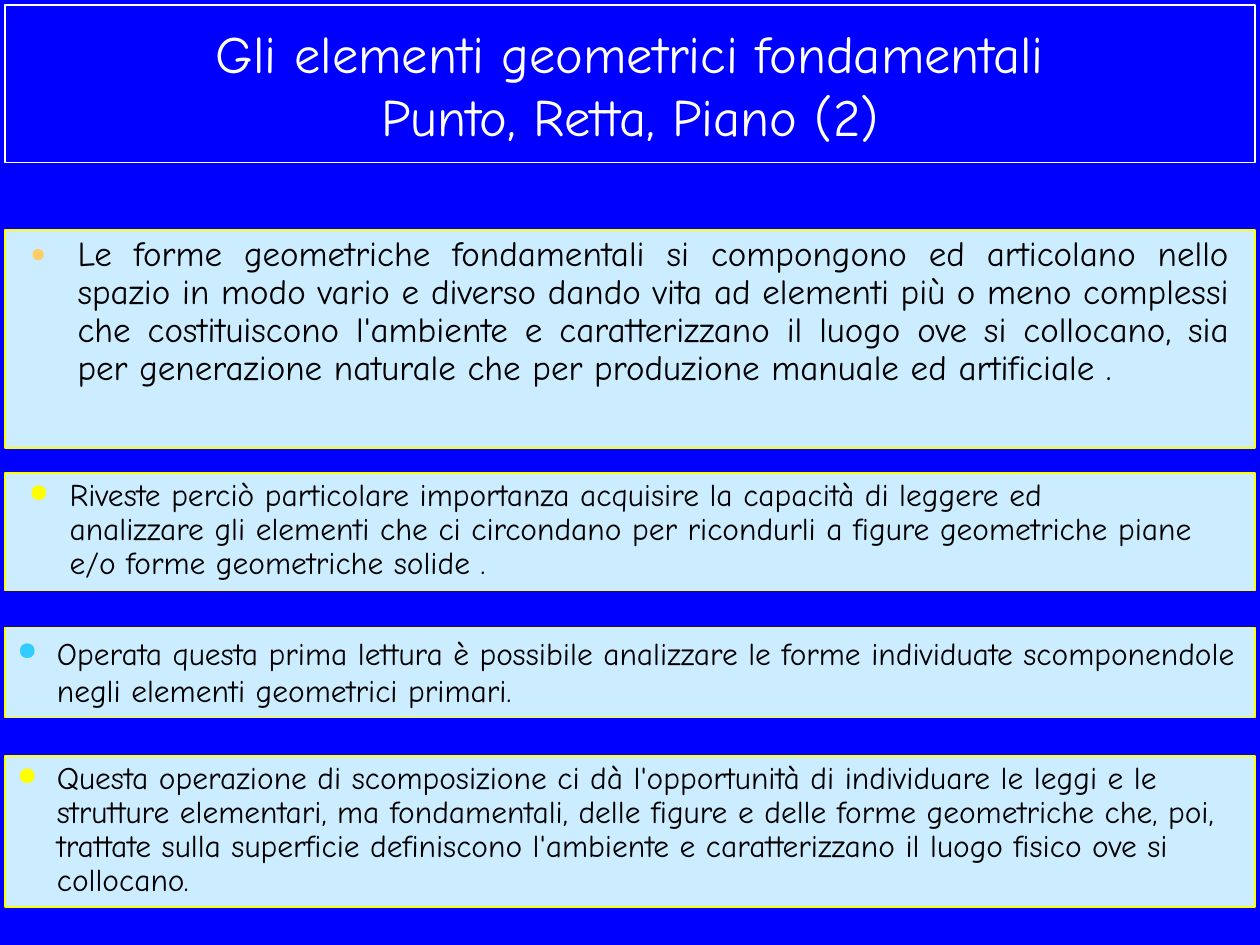
from dataclasses import dataclass

from lxml.etree import SubElement
from pptx import Presentation
from pptx.dml.color import RGBColor
from pptx.enum.shapes import MSO_SHAPE
from pptx.enum.text import MSO_ANCHOR, MSO_AUTO_SIZE, PP_ALIGN
from pptx.oxml.ns import qn
from pptx.shapes.autoshape import Shape
from pptx.util import Pt

BLUE = RGBColor(0x00, 0x00, 0xFF)
PALE_BLUE = RGBColor(0xCC, 0xEC, 0xFF)
SKY = RGBColor(0x33, 0xCC, 0xFF)
YELLOW = RGBColor(0xFF, 0xFF, 0x00)
ORANGE = RGBColor(0xFF, 0xCC, 0x66)
WHITE = RGBColor(0xFF, 0xFF, 0xFF)
BLACK = RGBColor(0x00, 0x00, 0x00)

FONT = "Comic Neue"
LEFT = 2.88
WIDTH = 714.24


@dataclass
class Panel:
    text: str
    top: float
    height: float
    bullet_color: RGBColor
    text_indent: float = 22.5
    hanging: float = 22.5
    line_spacing: float = 0.9
    size: float = 18
    bullet_percent: int = 80
    side_inset: float = 7.2
    align: PP_ALIGN = PP_ALIGN.LEFT


BODY = Panel(
    "Le forme geometriche fondamentali si compongono ed articolano nello spazio "
    "in modo vario e diverso dando vita ad elementi più o meno complessi che "
    "costituiscono l'ambiente e caratterizzano il luogo ove si collocano, sia "
    "per generazione naturale che per produzione manuale ed artificiale .",
    131.5, 124.5, ORANGE, text_indent=27, hanging=27, size=20,
    bullet_percent=75, side_inset=14.4, align=PP_ALIGN.JUSTIFY,
)
PANELS = [
    Panel(
        "Riveste perciò particolare importanza acquisire la capacità di leggere ed\v"
        "analizzare gli elementi che ci circondano per ricondurli a figure "
        "geometriche piane e/o forme geometriche solide .",
        270.5, 67, YELLOW, text_indent=29.75, hanging=23.25,
    ),
    Panel(
        "Operata questa prima lettura è possibile analizzare le forme individuate "
        "scomponendole negli elementi geometrici primari.",
        358.5, 51.5, SKY, line_spacing=1.0,
    ),
    Panel(
        "Questa operazione di scomposizione ci dà l'opportunità di individuare le "
        "leggi e le strutture elementari, ma fondamentali, delle figure e delle "
        "forme geometriche che, poi, trattate sulla superficie definiscono "
        "l'ambiente e caratterizzano il luogo fisico ove si collocano.",
        432, 86.5, YELLOW,
    ),
]


def place(box: Shape, top: float, height: float, line: RGBColor, weight: float) -> None:
    box.left, box.top = Pt(LEFT), Pt(top)
    box.width, box.height = Pt(WIDTH), Pt(height)
    box.line.color.rgb = line
    box.line.width = Pt(weight)


def write(box: Shape, text: str, size: float, color: RGBColor,
          align: PP_ALIGN, anchor: MSO_ANCHOR, side_inset: float = 7.2) -> None:
    frame = box.text_frame
    frame.word_wrap = True
    frame.auto_size = MSO_AUTO_SIZE.NONE
    frame.vertical_anchor = anchor
    frame.margin_left = frame.margin_right = Pt(side_inset)
    frame.margin_top = frame.margin_bottom = Pt(3.6)
    frame.text = text
    para = frame.paragraphs[0]
    para.alignment = align
    para.space_before = Pt(0)
    for span in para.runs:
        span.font.name = FONT
        span.font.size = Pt(size)
        span.font.color.rgb = color


def add_bullet(box: Shape, panel: Panel) -> None:
    para = box.text_frame.paragraphs[0]
    para.line_spacing = panel.line_spacing
    properties = para._p.get_or_add_pPr()
    properties.set("marL", str(Pt(panel.text_indent)))
    properties.set("indent", str(-Pt(panel.hanging)))
    color = SubElement(properties, qn("a:buClr"))
    SubElement(color, qn("a:srgbClr"), val=str(panel.bullet_color))
    SubElement(properties, qn("a:buSzPct"), val=str(panel.bullet_percent * 1000))
    SubElement(properties, qn("a:buChar"), char="●")


def draw_panel(box: Shape, panel: Panel) -> None:
    place(box, panel.top, panel.height, YELLOW, 1)
    box.fill.solid()
    box.fill.fore_color.rgb = PALE_BLUE
    box.shadow.inherit = False
    write(box, panel.text, panel.size, BLACK, panel.align,
          MSO_ANCHOR.TOP, panel.side_inset)
    add_bullet(box, panel)


def main() -> None:
    deck = Presentation()
    deck.slide_width, deck.slide_height = Pt(720), Pt(540)
    page = deck.slides.add_slide(deck.slide_layouts[1])
    page.background.fill.solid()
    page.background.fill.fore_color.rgb = BLUE

    title = page.shapes.title
    place(title, LEFT, 90, WHITE, 0.75)
    write(title, "Gli elementi geometrici fondamentali\vPunto, Retta, Piano (2)",
          30, WHITE, PP_ALIGN.CENTER, MSO_ANCHOR.MIDDLE)

    draw_panel(page.placeholders[1], BODY)
    for panel in PANELS:
        box = page.shapes.add_shape(MSO_SHAPE.RECTANGLE, 0, 0, 0, 0)
        draw_panel(box, panel)

    deck.save("out.pptx")


if __name__ == "__main__":
    main()
